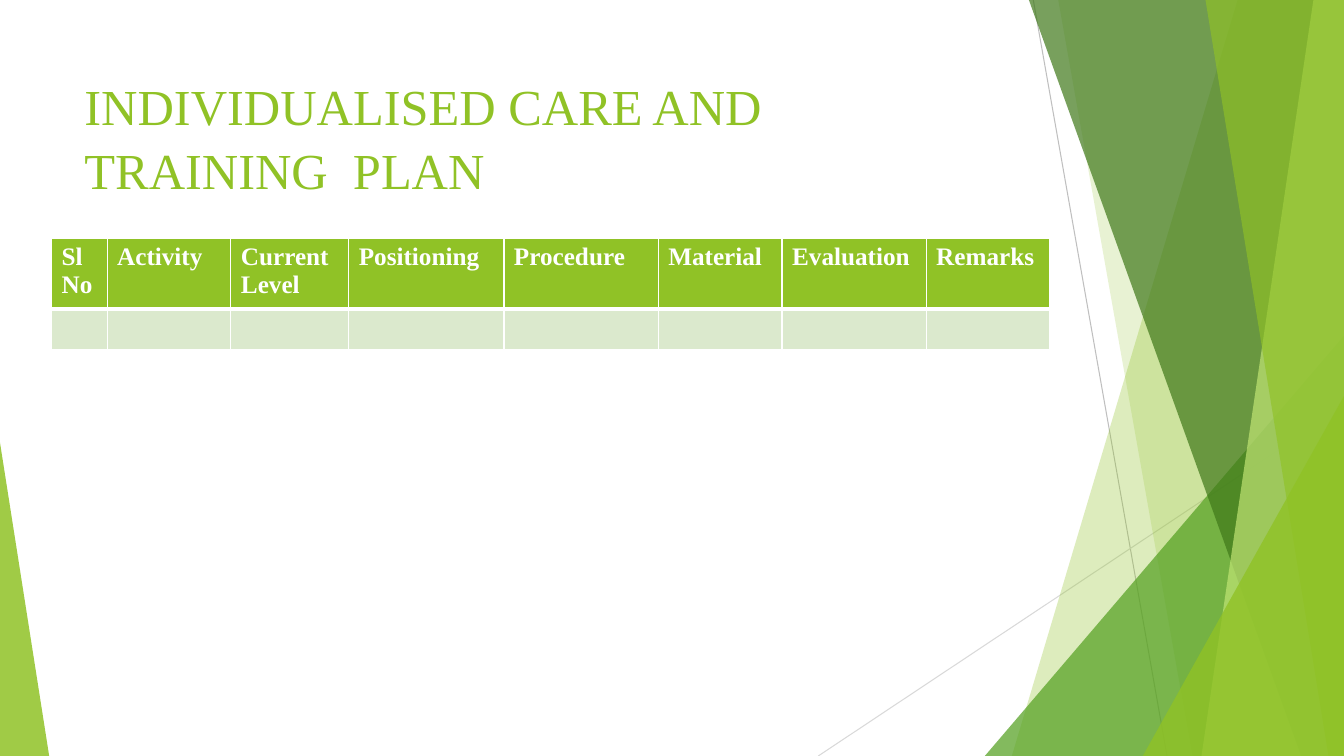
from lxml import etree
from pptx import Presentation
from pptx import util as u
from pptx.dml import color
from pptx.enum import shapes, text
from pptx.oxml import ns

WIDTH, HEIGHT = 33.87, 19.05
LIME, WHITE, PALE = "90C226", "FFFFFF", "DBE9CD"
TITLE = {"name": "Times New Roman", "size": u.Pt(36)}
HEADING = {"name": "Times New Roman", "size": u.Pt(18), "bold": True}
TITLE_FRAME = {"word_wrap": True, "vertical_anchor": text.MSO_ANCHOR.TOP}
TABLE_FLAGS = {"first_row": False, "horz_banding": False}
COLUMNS = {
    "Sl No": 1.4,
    "Activity": 3.12,
    "Current Level": 2.97,
    "Positioning": 3.91,
    "Procedure": 3.89,
    "Material": 3.12,
    "Evaluation": 3.63,
    "Remarks": 3.1,
}


def apply(target, values):
    for name, value in values.items():
        setattr(target, name, value)


def paint(fill, shade, opacity=100):
    fill.solid()
    fill.fore_color.rgb = color.RGBColor.from_string(shade)
    if opacity < 100:
        tint = fill._xPr.find(".//" + ns.qn("a:srgbClr"))
        etree.SubElement(tint, ns.qn("a:alpha"), val=str(opacity * 1000))


def finish(shape, shade, opacity):
    shape.shadow.inherit = False
    shape.line.fill.background()
    paint(shape.fill, shade, opacity)


def add_line(page, start, end, shade):
    line = page.shapes.add_connector(
        shapes.MSO_CONNECTOR.STRAIGHT, *map(u.Cm, start + end))
    line.line.width = u.Pt(0.75)
    paint(line.line.fill, shade)
    etree.SubElement(line._element.spPr, ns.qn("a:effectLst"))


def add_ribbon(page, top, bottom, shade, opacity):
    corners = [(WIDTH, 0), (WIDTH, HEIGHT), (bottom, HEIGHT)]
    builder = page.shapes.build_freeform(u.Cm(top), 0)
    builder.add_line_segments([(u.Cm(x), u.Cm(y)) for x, y in corners])
    finish(builder.convert_to_shape(), shade, opacity)


def add_triangle(page, left, width, height, apex, shade, opacity):
    place = (left, HEIGHT - height, width, height)
    triangle = page.shapes.add_shape(
        shapes.MSO_SHAPE.ISOSCELES_TRIANGLE, *map(u.Cm, place))
    triangle.adjustments[0] = apex
    finish(triangle, shade, opacity)


def write(para, words, values, shade):
    span = para.add_run()
    span.text = words
    apply(span.font, values)
    paint(span.font.fill, shade)


def add_title(page, words):
    box = page.shapes.add_textbox(*map(u.Cm, (1.88, 1.7, 23.88, 3.66)))
    apply(box.text_frame, TITLE_FRAME)
    para = box.text_frame.paragraphs[0]
    para.line_spacing = 1.05
    write(para, words, TITLE, LIME)


def add_borders(cell, bottom):
    properties = cell._tc.get_or_add_tcPr()
    for index, side in enumerate("LRTB"):
        width = u.Pt(bottom if side == "B" else 1)
        border = etree.Element(ns.qn("a:ln" + side), w=str(int(width)))
        fill = etree.SubElement(border, ns.qn("a:solidFill"))
        etree.SubElement(fill, ns.qn("a:srgbClr"), val=WHITE)
        properties.insert(index, border)


def add_plan(page):
    heights = (1.65, 1.04)
    place = (1.3, 6, sum(COLUMNS.values()), sum(heights))
    table = page.shapes.add_table(
        len(heights), len(COLUMNS), *map(u.Cm, place)).table
    apply(table, TABLE_FLAGS)
    for row, height in zip(table.rows, heights):
        row.height = u.Cm(height)
    for index, (heading, width) in enumerate(COLUMNS.items()):
        table.columns[index].width = u.Cm(width)
        head, body = table.cell(0, index), table.cell(1, index)
        write(head.text_frame.paragraphs[0], heading, HEADING, WHITE)
        for cell, shade, bottom in ((head, LIME, 3), (body, PALE, 1)):
            paint(cell.fill, shade)
            add_borders(cell, bottom)
    for cell in table.iter_cells():
        cell.vertical_anchor = text.MSO_ANCHOR.TOP


def add_backdrop(page):
    add_line(page, (26.04, 0), (29.41, HEIGHT), "BFBFBF")
    add_line(page, (WIDTH, 10.24), (20.62, HEIGHT), "D9D9D9")
    add_ribbon(page, 31.19, 25.5, LIME, 30)
    add_ribbon(page, 26.67, 30.05, LIME, 20)
    add_triangle(page, 24.82, 9.05, 10.59, 1, "54A021", 72)
    add_ribbon(page, 25.93, 32.79, "3F7819", 70)
    add_ribbon(page, 33.1, 30.28, "C0E474", 70)
    add_ribbon(page, 30.38, 33.48, LIME, 65)
    add_triangle(page, 28.8, 5.07, 9.07, 1, LIME, 80)
    add_triangle(page, 0, 1.24, 7.9, 0, LIME, 85)


def main():
    deck = Presentation()
    apply(deck, {"slide_width": u.Cm(WIDTH), "slide_height": u.Cm(HEIGHT)})
    page = deck.slides.add_slide(deck.slide_layouts[6])
    add_backdrop(page)
    add_title(page, "INDIVIDUALISED CARE AND TRAINING  PLAN")
    add_plan(page)
    deck.save("out.pptx")


if __name__ == "__main__":
    main()
